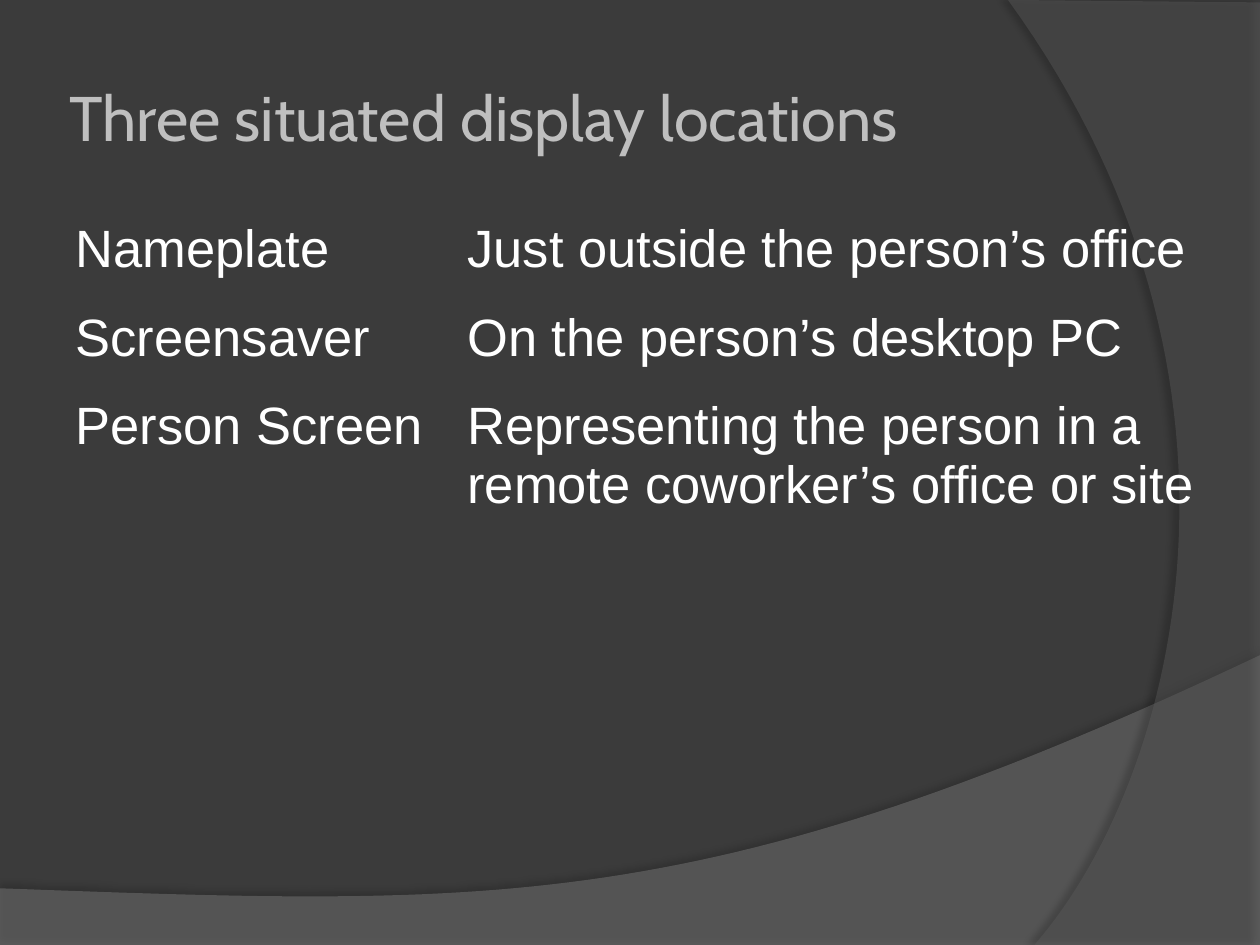
from dataclasses import dataclass

from lxml import etree
from pptx import Presentation
from pptx import util as u
from pptx.dml.color import RGBColor
from pptx.enum import text
from pptx.oxml import ns


@dataclass(frozen=True)
class Theme:
    background: str = "3B3B3B"
    title_color: str = "BFBFBF"
    body_color: str = "FFFFFF"
    shadow_color: str = "000000"
    title_font: str = "Cabin"
    body_font: str = "Arial"
    title_size: float = 36
    body_size: float = 30
    plain_table: str = "{2D5ABB26-0587-4C30-8999-92F81FD0307C}"


Point = tuple[float, float]


@dataclass(frozen=True)
class Swoosh:
    """A translucent sheet: a cubic curve closed by straight edges (points)."""
    curve: tuple[Point, Point, Point, Point]
    corners: tuple[Point, ...]
    color: str
    opacity: int
    shadow_opacity: int
    shadow_distance: float
    shadow_angle: int


@dataclass(frozen=True)
class Location:
    name: str
    place: str


THEME = Theme()

SWOOSHES = (
    Swoosh(((720, 374.4), (402.5, 524.9), (281.5, 517.7), (0, 507.6)),
           ((0, 540.7), (720, 540.7)), "7F7F7F", 45, 35, 3.5, 270),
    Swoosh(((591.1, 540), (673.2, 445.7), (733, 216), (576, 0)),
           ((720, 1.4), (720, 540)), "5E5E5E", 40, 45, 4, 180),
)

LOCATIONS = (
    Location("Nameplate", "Just outside the person’s office"),
    Location("Screensaver", "On the person’s desktop PC"),
    Location("Person Screen",
             "Representing the person in a remote coworker’s office or site"),
)


def curve_point(curve: tuple[Point, ...], t: float) -> Point:
    weights = ((1 - t) ** 3, 3 * t * (1 - t) ** 2, 3 * t * t * (1 - t), t ** 3)
    return tuple(sum(w * point[axis] for w, point in zip(weights, curve))
                 for axis in (0, 1))


def add_color(parent, color: str, opacity: int) -> None:
    node = etree.SubElement(parent, ns.qn("a:srgbClr"), val=color)
    etree.SubElement(node, ns.qn("a:alpha"), val=str(opacity * 1000))


def draw_swoosh(page, swoosh: Swoosh, steps: int = 60) -> None:
    outline = [curve_point(swoosh.curve, i / steps) for i in range(steps + 1)]
    outline.extend(swoosh.corners)
    start, *rest = [(u.Pt(x), u.Pt(y)) for x, y in outline]
    builder = page.shapes.build_freeform(*start, scale=1.0)
    builder.add_line_segments(rest, close=True)
    shape = builder.convert_to_shape()
    shape.line.fill.background()
    shape.fill.solid()
    shape.fill.fore_color.rgb = RGBColor.from_string(swoosh.color)

    # Transparency and outer shadow
    properties = shape._element.spPr
    fill = properties.find(ns.qn("a:solidFill"))
    fill.remove(fill[0])
    add_color(fill, swoosh.color, swoosh.opacity)
    shape.shadow.inherit = False
    effects = properties.find(ns.qn("a:effectLst"))
    shadow = etree.SubElement(
        effects, ns.qn("a:outerShdw"), blurRad=str(u.Pt(4)),
        dist=str(u.Pt(swoosh.shadow_distance)),
        dir=str(swoosh.shadow_angle * 60000), algn="ctr", rotWithShape="0")
    add_color(shadow, THEME.shadow_color, swoosh.shadow_opacity)


def write(frame, words: str, font: str, size: float, color: str) -> None:
    span = frame.paragraphs[0].add_run()
    span.text = words
    for name, value in {"name": font, "size": u.Pt(size)}.items():
        setattr(span.font, name, value)
    span.font.color.rgb = RGBColor.from_string(color)


def draw_title(page, words: str) -> None:
    box = page.shapes.add_textbox(u.Pt(36), u.Pt(21.6), u.Pt(653.8), u.Pt(90))
    frame = box.text_frame
    settings = {"word_wrap": True, "vertical_anchor": text.MSO_ANCHOR.MIDDLE}
    settings |= {f"margin_{side}": u.Pt(3.6)
                 for side in ("left", "top", "right", "bottom")}
    for name, value in settings.items():
        setattr(frame, name, value)
    write(frame, words, THEME.title_font, THEME.title_size, THEME.title_color)


def draw_locations(page, locations: tuple[Location, ...]) -> None:
    height = u.Pt(187.2)
    holder = page.shapes.add_table(len(locations), 2, u.Pt(36), u.Pt(126),
                                   u.Pt(666), height)
    table = holder.table
    for name in ("first_row", "horz_banding"):
        setattr(table, name, False)
    holder._element.find(f".//{ns.qn('a:tableStyleId')}").text = THEME.plain_table
    for column, width in zip(table.columns, (223.9, 442.1)):
        column.width = u.Pt(width)

    margins = {"margin_left": 7.2, "margin_top": 0,
               "margin_right": 7.2, "margin_bottom": 14.4}
    for row, location in zip(table.rows, locations):
        row.height = u.Pt(29.5)
        for cell, words in zip(row.cells, (location.name, location.place)):
            cell.fill.background()
            for name, value in margins.items():
                setattr(cell, name, u.Pt(value))
            write(cell.text_frame, words, THEME.body_font, THEME.body_size,
                  THEME.body_color)
    holder.height = height


def main() -> None:
    deck = Presentation()
    deck.slide_width, deck.slide_height = u.Pt(720), u.Pt(540)
    page = deck.slides.add_slide(deck.slide_layouts[6])

    # Backdrop
    page.background.fill.solid()
    page.background.fill.fore_color.rgb = RGBColor.from_string(THEME.background)
    for swoosh in SWOOSHES:
        draw_swoosh(page, swoosh)

    # Content
    draw_title(page, "Three situated display locations")
    draw_locations(page, LOCATIONS)
    deck.save("out.pptx")


if __name__ == "__main__":
    main()
